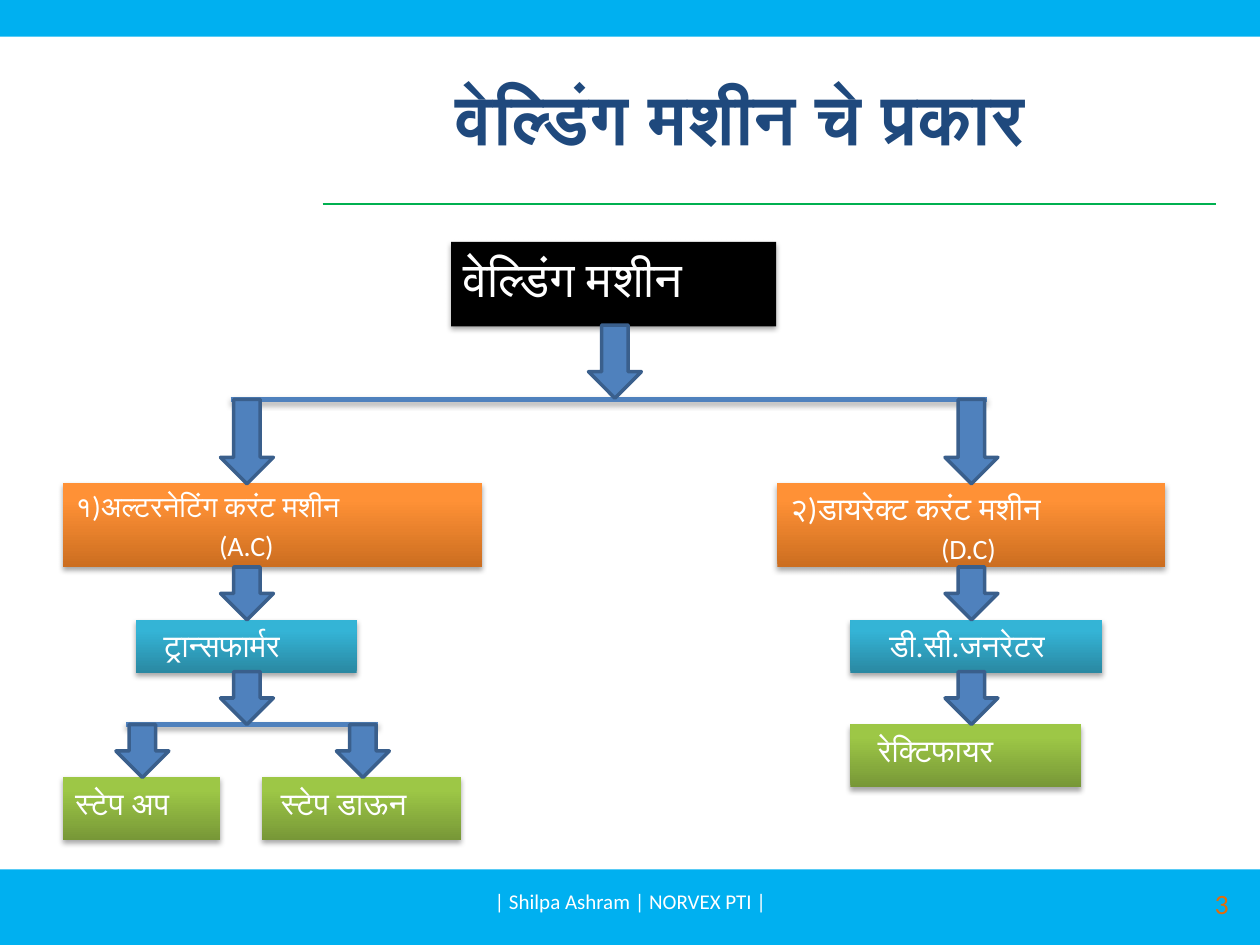
from dataclasses import dataclass

from pptx import Presentation
from pptx.dml.color import RGBColor
from pptx.enum.shapes import MSO_CONNECTOR as CONNECTOR, MSO_SHAPE as SHAPE
from pptx.enum.text import MSO_ANCHOR as ANCHOR, PP_ALIGN as ALIGN
from pptx.oxml import parse_xml
from pptx.oxml.ns import nsdecls
from pptx.util import Inches, Pt


@dataclass(frozen=True)
class Theme:
    font: str = "Calibri"
    band: str = "00B0F0"
    rule: str = "00B050"
    title: str = "1F497D"
    number: str = "E46C0A"
    white: str = "FFFFFF"
    arrow: str = "4F81BD"
    arrow_edge: str = "3A5F8C"
    # Box fills: colour at the bottom, colour at the top
    black: tuple = ("000000", "000000")
    orange: tuple = ("CC6E20", "FF9136")
    teal: tuple = ("2A88A2", "34B4D6")
    green: tuple = ("779737", "9DC746")
    title_size: float = 40
    root_size: float = 28
    node_size: float = 18
    type_size: float = 16.6
    detail_size: float = 16
    footer_size: float = 12


theme = Theme()
rgb = RGBColor.from_string


def style_paragraph(paragraph, size, color, align=ALIGN.LEFT, bold=False):
    paragraph.alignment = align
    paragraph.font.name = theme.font
    paragraph.font.size = Pt(size)
    paragraph.font.bold = bold
    paragraph.font.color.rgb = rgb(color)


def add_shadow(shape):
    """Soft shadow straight below; call after fill and line are set."""
    shape._element.spPr.append(parse_xml(
        f'<a:effectLst {nsdecls("a")}>'
        '<a:outerShdw blurRad="40000" dist="23000" dir="5400000" rotWithShape="0">'
        '<a:srgbClr val="000000"><a:alpha val="35000"/></a:srgbClr>'
        '</a:outerShdw></a:effectLst>'))


presentation = Presentation()
presentation.slide_width = Inches(10)
presentation.slide_height = Inches(7.5)
slide = presentation.slides.add_slide(presentation.slide_layouts[5])
shapes = slide.shapes

# Top and bottom bands
for top, height in ((6.9, 0.6), (0, 0.29)):
    band = shapes.add_shape(
        SHAPE.RECTANGLE, 0, Inches(top), Inches(10), Inches(height))
    band.fill.solid()
    band.fill.fore_color.rgb = rgb(theme.band)
    band.line.fill.background()
    band.shadow.inherit = False

# Title and the rule below it
title = shapes.title
title.left, title.top = Inches(2.56), Inches(0.3)
title.width, title.height = Inches(7.09), Inches(1.25)
title_frame = title.text_frame
title_frame.text = "वेल्डिंग मशीन चे प्रकार"
title_frame.vertical_anchor = ANCHOR.MIDDLE
title_frame.margin_right = Inches(0.56)
style_paragraph(title_frame.paragraphs[0], theme.title_size, theme.title,
                ALIGN.CENTER, bold=True)

rule = shapes.add_connector(
    CONNECTOR.STRAIGHT, Inches(2.56), Inches(1.62), Inches(9.65), Inches(1.62))
rule.line.color.rgb = rgb(theme.rule)
rule.line.width = Pt(0.75)
rule._element.spPr.append(parse_xml(f'<a:effectLst {nsdecls("a")}/>'))

# Footer and slide number
footers = (
    ("| Shilpa Ashram | NORVEX PTI |", 3.42, 6.95, 3.17,
     theme.footer_size, theme.white, ALIGN.CENTER),
    ("3", 7.52, 6.97, 2.33, theme.detail_size, theme.number, ALIGN.RIGHT),
)
for text, left, top, width, size, color, align in footers:
    footer = shapes.add_textbox(
        Inches(left), Inches(top), Inches(width), Inches(0.4))
    footer.text_frame.word_wrap = True
    footer.text_frame.vertical_anchor = ANCHOR.MIDDLE
    footer.text_frame.text = text
    style_paragraph(footer.text_frame.paragraphs[0], size, color, align)

# Tree boxes: left, top, width, height, fill, lines of (text, size, indent)
boxes = (
    (3.58, 1.92, 2.58, 0.67, theme.black,
     [("वेल्डिंग मशीन", theme.root_size, 0)]),
    (0.5, 3.83, 3.33, 0.67, theme.orange,
     [("१)अल्टरनेटिंग करंट मशीन", theme.type_size, 0),
      ("(A.C)", theme.detail_size, 1.14)]),
    (6.17, 3.83, 3.08, 0.67, theme.orange,
     [("२)डायरेक्ट करंट मशीन", theme.node_size, 0),
      ("(D.C)", theme.detail_size, 1.2)]),
    (1.08, 4.92, 1.75, 0.42, theme.teal,
     [("ट्रान्सफार्मर", theme.node_size, 0.12)]),
    (6.75, 4.92, 2, 0.42, theme.teal,
     [("डी.सी.जनरेटर", theme.node_size, 0.21)]),
    (6.75, 5.75, 1.83, 0.5, theme.green,
     [("रेक्टिफायर", theme.node_size, 0.12)]),
    (0.5, 6.17, 1.25, 0.5, theme.green,
     [("स्टेप अप", theme.node_size, 0)]),
    (2.08, 6.17, 1.58, 0.5, theme.green,
     [("स्टेप डाऊन", theme.node_size, 0.05)]),
)
for left, top, width, height, (bottom_color, top_color), lines in boxes:
    box = shapes.add_shape(SHAPE.RECTANGLE, Inches(left), Inches(top),
                           Inches(width), Inches(height))
    if bottom_color == top_color:
        box.fill.solid()
        box.fill.fore_color.rgb = rgb(top_color)
    else:
        box.fill.gradient()
        box.fill.gradient_angle = 90
        start, end = box.fill.gradient_stops
        start.color.rgb, start.position = rgb(bottom_color), 0
        end.color.rgb, end.position = rgb(top_color), 0.8
    box.line.fill.background()
    add_shadow(box)

    frame = box.text_frame
    frame.word_wrap = True
    frame.vertical_anchor = ANCHOR.TOP
    frame.text = "\n".join(text for text, _, _ in lines)
    for index, (_, size, indent) in enumerate(lines):
        paragraph = frame.paragraphs[index]
        properties = paragraph._p.get_or_add_pPr()
        properties.set("marL", str(Inches(indent)))
        properties.set("indent", "0")
        style_paragraph(paragraph, size, theme.white)
        if index:
            paragraph.space_before = Pt(3)

# Horizontal branch bars
for left, right, y in ((1.83, 7.83, 3.17), (1, 3, 5.75)):
    bar = shapes.add_connector(
        CONNECTOR.STRAIGHT, Inches(left), Inches(y), Inches(right), Inches(y))
    bar.line.color.rgb = rgb(theme.arrow)
    bar.line.width = Pt(3)
    add_shadow(bar)

# Block arrows: left, top, height
arrows = [(4.67, 2.58, 0.58)]
for left in (1.75, 7.5):
    arrows += [(left, 3.17, 0.67), (left, 4.5, 0.42), (left, 5.33, 0.42)]
arrows += [(left, 5.75, 0.42) for left in (0.92, 2.67)]
for left, top, height in arrows:
    arrow = shapes.add_shape(SHAPE.DOWN_ARROW, Inches(left), Inches(top),
                             Inches(0.42), Inches(height))
    arrow.fill.solid()
    arrow.fill.fore_color.rgb = rgb(theme.arrow)
    arrow.line.color.rgb = rgb(theme.arrow_edge)
    arrow.line.width = Pt(2)
    arrow.shadow.inherit = False

presentation.save("out.pptx")
